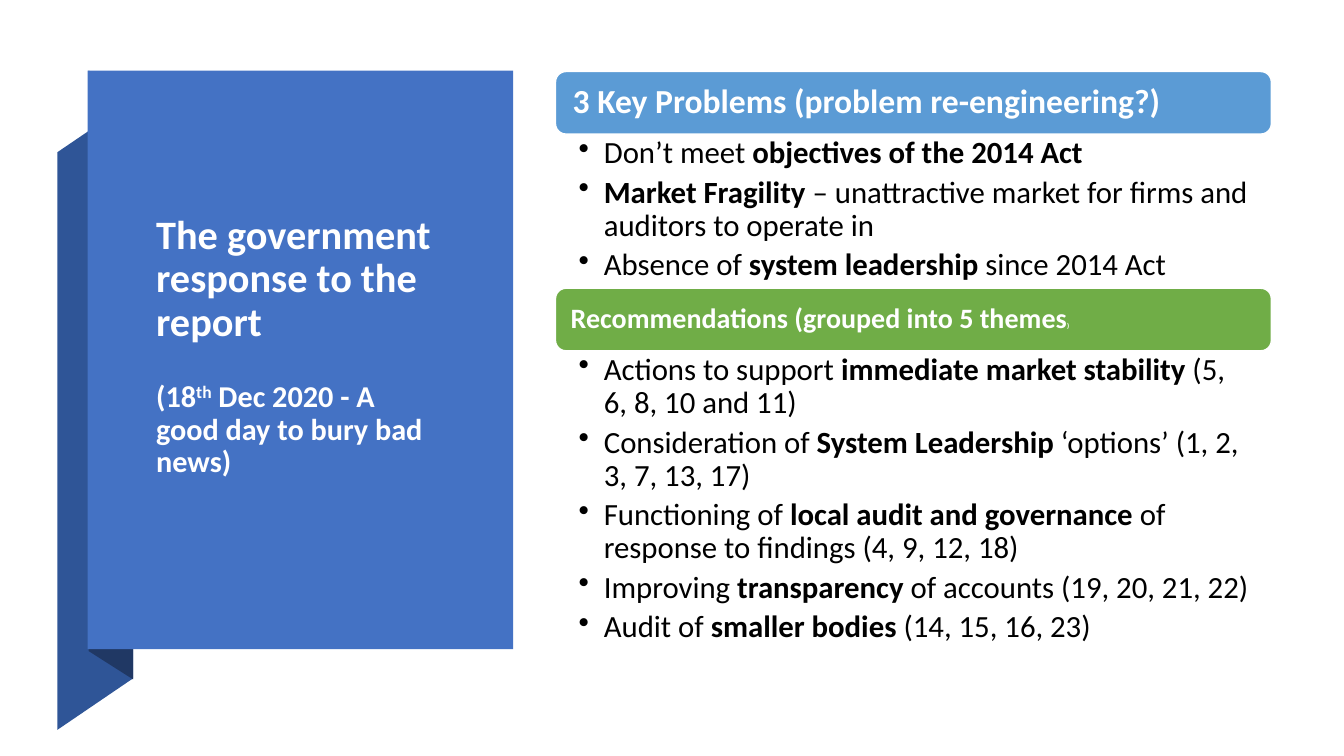
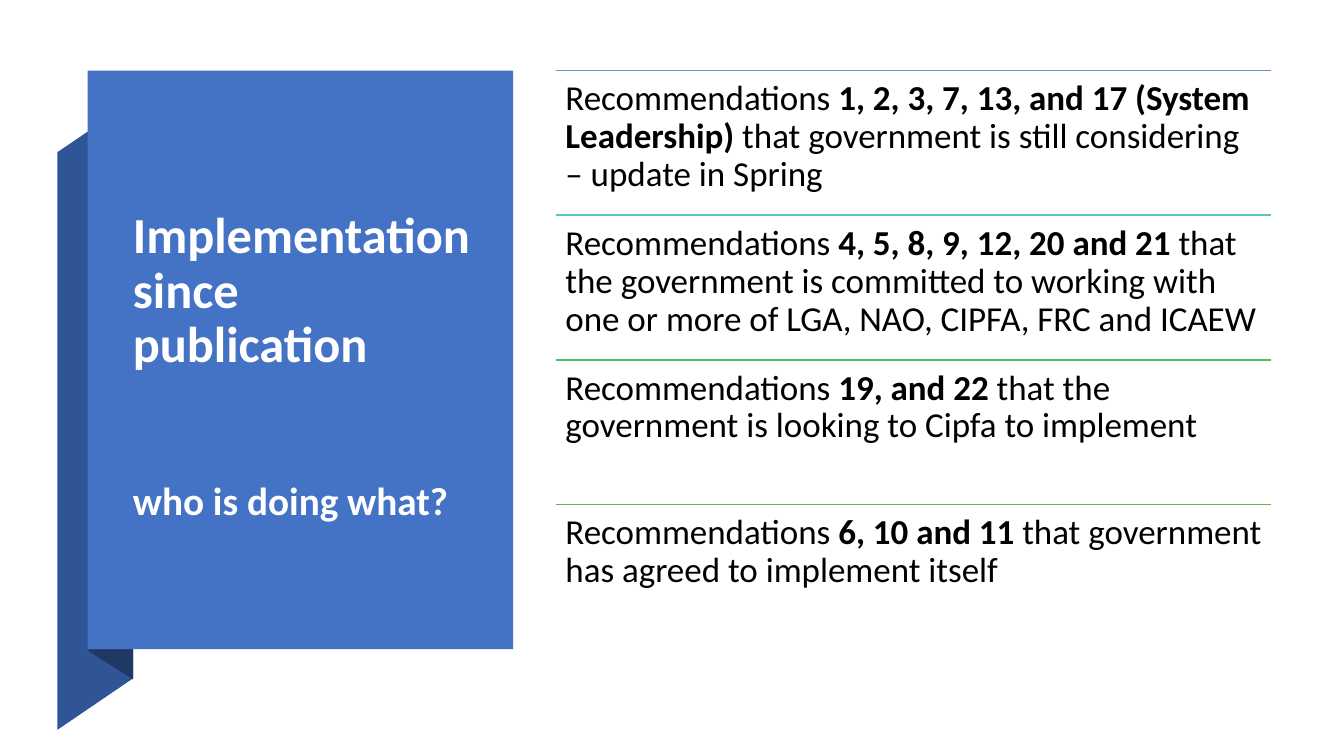
from lxml.etree import SubElement
from pptx import Presentation
from pptx.dml.color import RGBColor
from pptx.enum.shapes import MSO_CONNECTOR, MSO_SHAPE
from pptx.enum.text import MSO_ANCHOR, PP_ALIGN
from pptx.oxml.ns import qn
from pptx.util import Inches, Pt

rgb = RGBColor.from_string
FONT = "Calibri"
WHITE, BLACK = "FFFFFF", "000000"
BLUE, GREEN = "5B9BD5", "70AD47"
PANEL_LEFT, PANEL_TOP, PANEL_HEIGHT = 0.87, 0.7, 5.74
BODY_LEFT, BODY_WIDTH = 5.51, 7.1


def paint(shape, color):
    shape.shadow.inherit = False
    shape.fill.solid()
    shape.fill.fore_color.rgb = rgb(color)
    shape.line.fill.background()


def write(shape, paragraphs, color, insets, anchor=MSO_ANCHOR.TOP,
          bold=False, bullets=False):
    """Fill a shape with (text, size, space before); ** toggles a bold run."""
    frame = shape.text_frame
    frame.word_wrap = True
    frame.vertical_anchor = anchor
    frame.margin_left, frame.margin_top, frame.margin_right, frame.margin_bottom = map(Inches, insets)
    for index, (text, size, before) in enumerate(paragraphs):
        paragraph = frame.add_paragraph() if index else frame.paragraphs[0]
        paragraph.alignment = PP_ALIGN.LEFT
        paragraph.line_spacing = 0.9
        paragraph.space_before = Pt(before)
        font = paragraph.font
        font.name, font.size, font.bold = FONT, Pt(size), bold
        font.color.rgb = rgb(color)
        for part, words in enumerate(text.split("**")):
            if words:
                run = paragraph.add_run()
                run.text = words
                if part % 2:
                    run.font.bold = True
        if bullets:
            properties = paragraph._p.get_or_add_pPr()
            properties.set("marL", str(Inches(0.25)))
            properties.set("indent", str(Inches(-0.25)))
            bullet = SubElement(properties, qn("a:buChar"))
            bullet.set("char", "•")
            properties.insert_element_before(bullet, "a:tabLst", "a:defRPr", "a:extLst")
    return frame


deck = Presentation()
deck.slide_width, deck.slide_height = Inches(13.33), Inches(7.5)

# Shared ribbon, panel and title
ribbon_parts = [
    ("2F5597", [(0.57, 7.24), (1.32, 6.73), (1.32, 1), (0.57, 1.51)]),
    ("203864", [(0.88, 6.46), (1.32, 6.74), (1.32, 0.99), (0.88, 0.7)]),
]
titles = [
    (1.45, 1.47, 3.01, [("The government response to the report", 28.8, 0),
                        ("(18**th** Dec 2020 - A good day to bury bad news)", 21.6, 26)]),
    (1.22, 1.67, 3.57, [("Implementation since publication", 36, 0),
                        ("who is doing what?", 28, 77)]),
]
slides, title_frames = [], []
for left, top, width, lines in titles:
    slide = deck.slides.add_slide(deck.slide_layouts[6])
    for color, corners in ribbon_parts:
        points = [(Inches(x), Inches(y)) for x, y in corners]
        outline = slide.shapes.build_freeform(*points[0])
        outline.add_line_segments(points[1:], close=True)
        paint(outline.convert_to_shape(), color)
    panel = slide.shapes.add_shape(MSO_SHAPE.RECTANGLE, Inches(PANEL_LEFT), Inches(PANEL_TOP),
                                   Inches(4.22), Inches(PANEL_HEIGHT))
    paint(panel, "4472C4")
    title = slide.shapes.add_textbox(Inches(left), Inches(top), Inches(width), Inches(3.94))
    title_frames.append(write(title, lines, WHITE, (0.1, 0.05, 0.1, 0.05), MSO_ANCHOR.MIDDLE, bold=True))
    slides.append(slide)
response, implementation = slides
ordinal = title_frames[0].paragraphs[1].runs[1]
ordinal._r.get_or_add_rPr().set("baseline", "30000")

# Slide 1: problems and recommendations
sections = [
    (0.71, BLUE, "3 Key Problems (problem re-engineering?)", 24, 0.14, 1.53, [
        "Don’t meet **objectives of the 2014 Act**",
        "**Market Fragility** – unattractive market for firms and auditors to operate in",
        "Absence of **system leadership** since 2014 Act",
    ]),
    (2.86, GREEN, "Recommendations (grouped into 5 themes**)**", 20, 0.12, 2.97, [
        "Actions to support **immediate market stability** (5, 6, 8, 10 and 11)",
        "Consideration of **System Leadership** ‘options’ (1, 2, 3, 7, 13, 17)",
        "Functioning of **local audit and governance** of response to findings (4, 9, 12, 18)",
        "Improving **transparency** of accounts (19, 20, 21, 22)",
        "Audit of **smaller bodies** (14, 15, 16, 23)",
    ]),
]
HEADING_HEIGHT = 0.62
for top, color, heading, size, inset, height, points in sections:
    banner = response.shapes.add_shape(MSO_SHAPE.ROUNDED_RECTANGLE, Inches(BODY_LEFT), Inches(top),
                                       Inches(BODY_WIDTH), Inches(HEADING_HEIGHT))
    paint(banner, color)
    banner.line.color.rgb = rgb(WHITE)
    banner.line.width = Pt(1)
    heading_frame = write(banner, [(heading, size, 0)], WHITE, (inset, 0.1, inset, 0.1),
                          MSO_ANCHOR.MIDDLE, bold=True)
    details = response.shapes.add_textbox(Inches(BODY_LEFT), Inches(top + HEADING_HEIGHT),
                                          Inches(BODY_WIDTH), Inches(height))
    write(details, [(point, 22, 4.4 if index else 0) for index, point in enumerate(points)],
          BLACK, (0.23, 0.03, 0.17, 0.03), bullets=True)
# The closing bracket of the last heading is tiny
heading_frame.paragraphs[0].runs[1].font.size = Pt(5)

# Slide 2: ruled rows of responsibilities
duties = [
    (BLUE, "Recommendations **1, 2, 3, 7, 13, and 17 (System Leadership)** that government is still "
           "considering – update in Spring"),
    ("52CAB8", "Recommendations **4, 5, 8, 9, 12, 20 and 21** that the government is committed to "
               "working with one or more of LGA, NAO, CIPFA, FRC and ICAEW"),
    ("49BF64", "Recommendations **19, and 22** that the government is looking to Cipfa to implement"),
    (GREEN, "Recommendations **6, 10 and 11** that government has agreed to implement itself"),
]
row_height = PANEL_HEIGHT / len(duties)
for index, (color, duty) in enumerate(duties):
    top = Inches(PANEL_TOP + index * row_height)
    rule = implementation.shapes.add_connector(MSO_CONNECTOR.STRAIGHT, Inches(BODY_LEFT), top,
                                               Inches(BODY_LEFT + BODY_WIDTH), top)
    rule.line.color.rgb = rgb(color)
    rule.line.width = Pt(1)
    SubElement(rule._element.spPr, qn("a:effectLst"))
    row = implementation.shapes.add_textbox(Inches(BODY_LEFT), top, Inches(BODY_WIDTH), Inches(row_height))
    write(row, [(duty, 25, 0)], BLACK, (0.1, 0.1, 0.1, 0.1))

deck.save("out.pptx")
